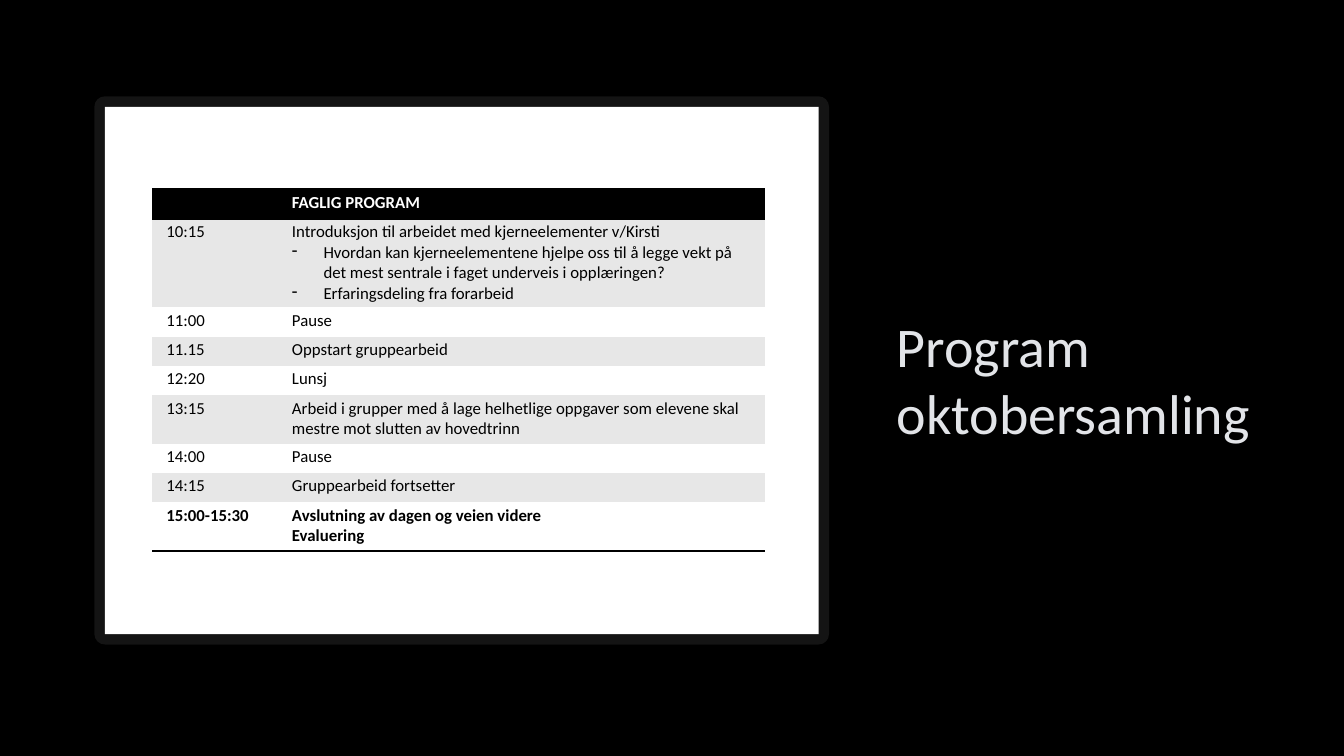
"""Build the October gathering programme slide with its timetable."""
from lxml import etree
from pptx import Presentation
from pptx import util as u
from pptx.dml.color import RGBColor
from pptx.enum import shapes, text
from pptx.oxml import ns, parse_xml

BLACK = RGBColor(0x00, 0x00, 0x00)
WHITE = RGBColor(0xFF, 0xFF, 0xFF)
BAND = RGBColor(0xE7, 0xE7, 0xE7)
TITLE = RGBColor(0xE2, 0xE4, 0xE8)
FONT = "Calibri"
NO_STYLE = "{2D5ABB26-0587-4C30-8999-92F81FD0307C}"
BULLET = "- "

ROWS = [
    (20.9, "", ["FAGLIG PROGRAM"]),
    (63.2, "10:15", [
        "Introduksjon til arbeidet med kjerneelementer v/Kirsti",
        BULLET + "Hvordan kan kjerneelementene hjelpe oss til å legge vekt på "
        "det mest sentrale i faget underveis i opplæringen?",
        BULLET + "Erfaringsdeling fra forarbeid",
    ]),
    (20.9, "11:00", ["Pause"]),
    (20.9, "11.15", ["Oppstart gruppearbeid"]),
    (20.9, "12:20", ["Lunsj"]),
    (34.8, "13:15", ["Arbeid i grupper med å lage helhetlige oppgaver som elevene skal "
                     "mestre mot slutten av hovedtrinn"]),
    (20.9, "14:00", ["Pause"]),
    (20.9, "14:15", ["Gruppearbeid fortsetter"]),
    (34.8, "15:00-15:30", ["Avslutning av dagen og veien videre", "Evaluering"]),
]


def write(frame, lines, size=12, color=BLACK, bold=False):
    for index, line in enumerate(lines):
        paragraph = frame.paragraphs[0] if index == 0 else frame.add_paragraph()
        if line.startswith(BULLET):
            properties = paragraph._p.get_or_add_pPr()
            properties.set("marL", str(u.Pt(22.5)))
            properties.set("indent", str(u.Pt(-22.5)))
            etree.SubElement(properties, ns.qn("a:buChar"), char="-")
        if not line:
            etree.SubElement(paragraph._p, ns.qn("a:endParaRPr"), sz=str(size * 100))
            continue
        run = paragraph.add_run()
        run.text = line.removeprefix(BULLET)
        run.font.name = FONT
        run.font.size = u.Pt(size)
        run.font.bold = bold
        run.font.color.rgb = color


def add_border(cell, side):
    border = parse_xml(
        f'<a:{side} {ns.nsdecls("a")} w="{u.Pt(2)}"><a:solidFill>'
        f'<a:srgbClr val="{BLACK}"/></a:solidFill></a:{side}>')
    properties = cell._tc.get_or_add_tcPr()
    properties.insert(len(properties) - 1, border)


presentation = Presentation()
presentation.slide_width = u.Pt(960)
presentation.slide_height = u.Pt(540)
slide = presentation.slides.add_slide(presentation.slide_layouts[6])
slide.background.fill.solid()
slide.background.fill.fore_color.rgb = BLACK

title = slide.shapes.add_textbox(u.Pt(633.6), u.Pt(76.3), u.Pt(283.7), u.Pt(245.5))
title.text_frame.word_wrap = True
title.text_frame.vertical_anchor = text.MSO_ANCHOR.BOTTOM
write(title.text_frame, ["Program oktobersamling"], size=40, color=TITLE)

panel = slide.shapes.add_shape(
    shapes.MSO_SHAPE.RECTANGLE, u.Pt(74.9), u.Pt(76.3), u.Pt(509.8), u.Pt(376.6))
panel.shadow.inherit = False
panel.fill.solid()
panel.fill.fore_color.rgb = WHITE
panel.line.width = u.Pt(15)
panel.line.color.rgb = WHITE
outline = panel.line._get_or_add_ln()
etree.SubElement(outline.find(".//" + ns.qn("a:srgbClr")), ns.qn("a:alpha"), val="7000")
etree.SubElement(outline, ns.qn("a:round"))

table_frame = slide.shapes.add_table(
    len(ROWS), 2, u.Pt(108.7), u.Pt(135.4), u.Pt(438), u.Pt(sum(row[0] for row in ROWS)))
table = table_frame.table
table._tbl.tblPr.find(ns.qn("a:tableStyleId")).text = NO_STYLE
table.first_row = table.horz_banding = False
table.columns[0].width = u.Pt(89.8)
table.columns[1].width = u.Pt(348.2)

for number, (height, time, activity) in enumerate(ROWS):
    header, last = number == 0, number == len(ROWS) - 1
    table.rows[number].height = u.Pt(height)
    for cell, lines in zip(table.rows[number].cells, ([time], activity)):
        cell.margin_left = cell.margin_right = u.Pt(10.1)
        cell.margin_top = cell.margin_bottom = u.Pt(2.2)
        cell.fill.solid()
        cell.fill.fore_color.rgb = BLACK if header else BAND if number % 2 else WHITE
        write(cell.text_frame, lines, color=WHITE if header else BLACK, bold=header or last)
        if header:
            add_border(cell, "lnT")
        if header or last:
            add_border(cell, "lnB")

presentation.save("out.pptx")
